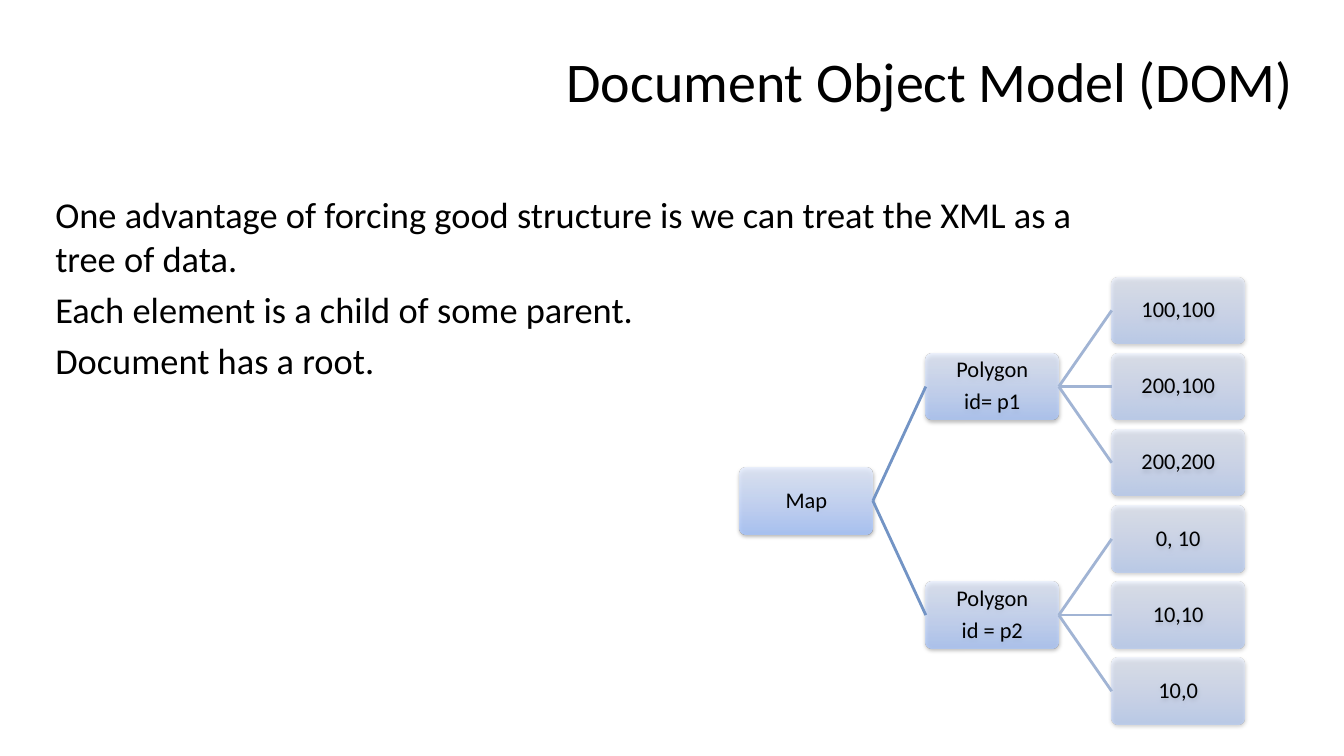
from dataclasses import dataclass

from lxml import etree
from pptx import Presentation
from pptx.dml.color import RGBColor
from pptx.enum.shapes import MSO_CONNECTOR, MSO_SHAPE
from pptx.enum.text import MSO_ANCHOR, PP_ALIGN
from pptx.oxml.ns import qn
from pptx.util import Pt

ROUNDED = MSO_SHAPE.ROUNDED_RECTANGLE
STRAIGHT = MSO_CONNECTOR.STRAIGHT
TOP, MIDDLE = MSO_ANCHOR.TOP, MSO_ANCHOR.MIDDLE
LEFT, CENTER, RIGHT = PP_ALIGN.LEFT, PP_ALIGN.CENTER, PP_ALIGN.RIGHT
LEFT_SIDE, RIGHT_SIDE = 1, 3


@dataclass(frozen=True)
class Theme:
    font: str = "Calibri"
    text: str = "000000"
    shadow: str = "000000"
    node_stops: tuple = ((0, "A4C4FF"), (35, "BFD4FF"), (100, "E6EEFF"))
    node_opacity: tuple = (80, 70, 50)  # by tree level
    branch_colors: tuple = ("7394C5", "A1B4D4")  # by parent level
    branch_width: float = 2
    title_size: float = 40
    body_size: float = 26
    node_size: float = 16


class SlideBuilder:
    def __init__(self, slide, theme):
        self.slide = slide
        self.theme = theme

    def fill_text(self, frame, lines, size, align, anchor, before=0, after=0, spacing=1.0):
        frame.word_wrap = True
        frame.vertical_anchor = anchor
        for i, line in enumerate(lines):
            paragraph = frame.paragraphs[0] if i == 0 else frame.add_paragraph()
            paragraph.alignment = align
            paragraph.space_before = Pt(before)
            paragraph.space_after = Pt(after)
            paragraph.line_spacing = spacing
            run = paragraph.add_run()
            run.text = line
            run.font.name = self.theme.font
            run.font.size = Pt(size)
            run.font.color.rgb = RGBColor.from_string(self.theme.text)

    def text(self, left, top, width, height, lines, size, align, anchor, before=0):
        box = self.slide.shapes.add_textbox(Pt(left), Pt(top), Pt(width), Pt(height))
        self.fill_text(box.text_frame, lines, size, align, anchor, before=before)

    def add_color(self, parent, color, opacity):
        node = etree.SubElement(parent, qn("a:srgbClr"), val=color)
        etree.SubElement(node, qn("a:alpha"), val=str(opacity * 1000))

    def node(self, left, top, width, height, lines, level):
        shape = self.slide.shapes.add_shape(ROUNDED, Pt(left), Pt(top), Pt(width), Pt(height))
        shape.adjustments[0] = 0.1
        shape.line.fill.background()

        # Translucent three-stop gradient, darkest at the bottom
        shape.fill.gradient()
        shape.fill.gradient_angle = 90
        properties = shape.element.spPr
        stops = properties.find(".//" + qn("a:gsLst"))
        for stop in list(stops):
            stops.remove(stop)
        for position, color in self.theme.node_stops:
            stop = etree.SubElement(stops, qn("a:gs"), pos=str(position * 1000))
            self.add_color(stop, color, self.theme.node_opacity[level])

        # Soft shadow below
        shape.shadow.inherit = False
        shadow = etree.SubElement(
            properties.find(qn("a:effectLst")), qn("a:outerShdw"),
            blurRad=str(Pt(3.1)), dist=str(Pt(1.6)), dir="5400000", rotWithShape="0")
        self.add_color(shadow, self.theme.shadow, 38)

        frame = shape.text_frame
        frame.margin_left = frame.margin_right = Pt(0.7)
        frame.margin_top = frame.margin_bottom = Pt(0.7)
        size = self.theme.node_size
        self.fill_text(frame, lines, size, CENTER, MIDDLE, after=0.35 * size, spacing=0.9)
        return shape

    def branch(self, parent, child, level):
        line = self.slide.shapes.add_connector(STRAIGHT, 0, 0, 0, 0)
        line.begin_connect(parent, RIGHT_SIDE)
        line.end_connect(child, LEFT_SIDE)
        line.line.width = Pt(self.theme.branch_width)
        line.line.color.rgb = RGBColor.from_string(self.theme.branch_colors[level])
        etree.SubElement(line.element.spPr, qn("a:effectLst"))


# Tree: each polygon with its points
POLYGONS = [
    (["Polygon", "id= p1"], ["100,100", "200,100", "200,200"]),
    (["Polygon", "id = p2"], ["0, 10", "10,10", "10,0"]),
]
TREE_LEFT, TREE_TOP = 528.5, 198
NODE_WIDTH, NODE_HEIGHT = 95, 47.5
COLUMN_STEP, ROW_STEP = 132.8, 54.4


def main():
    deck = Presentation()
    deck.slide_width, deck.slide_height = Pt(960), Pt(540)
    theme = Theme()
    builder = SlideBuilder(deck.slides.add_slide(deck.slide_layouts[6]), theme)

    # Title
    builder.text(298.8, 12.2, 631.4, 90, ["Document Object Model (DOM)"],
                 theme.title_size, RIGHT, MIDDLE)

    # Statements
    builder.text(32.4, 133.9, 750.2, 356.4, [
        "One advantage of forcing good structure is we can treat the XML as a tree of data.",
        "Each element is a child of some parent.",
        "Document has a root.",
    ], theme.body_size, LEFT, TOP, before=0.2 * theme.body_size)

    # Document tree: every parent is centred on its children
    def place(lines, level, row):
        return builder.node(TREE_LEFT + level * COLUMN_STEP, TREE_TOP + row * ROW_STEP,
                            NODE_WIDTH, NODE_HEIGHT, lines, level)

    point_count = sum(len(points) for _, points in POLYGONS)
    root = place(["Map"], 0, (point_count - 1) / 2)
    first_row = 0
    for label, points in POLYGONS:
        polygon = place(label, 1, first_row + (len(points) - 1) / 2)
        builder.branch(root, polygon, 0)
        for row, point in enumerate(points, first_row):
            builder.branch(polygon, place([point], 2, row), 1)
        first_row += len(points)

    deck.save("out.pptx")


if __name__ == "__main__":
    main()
